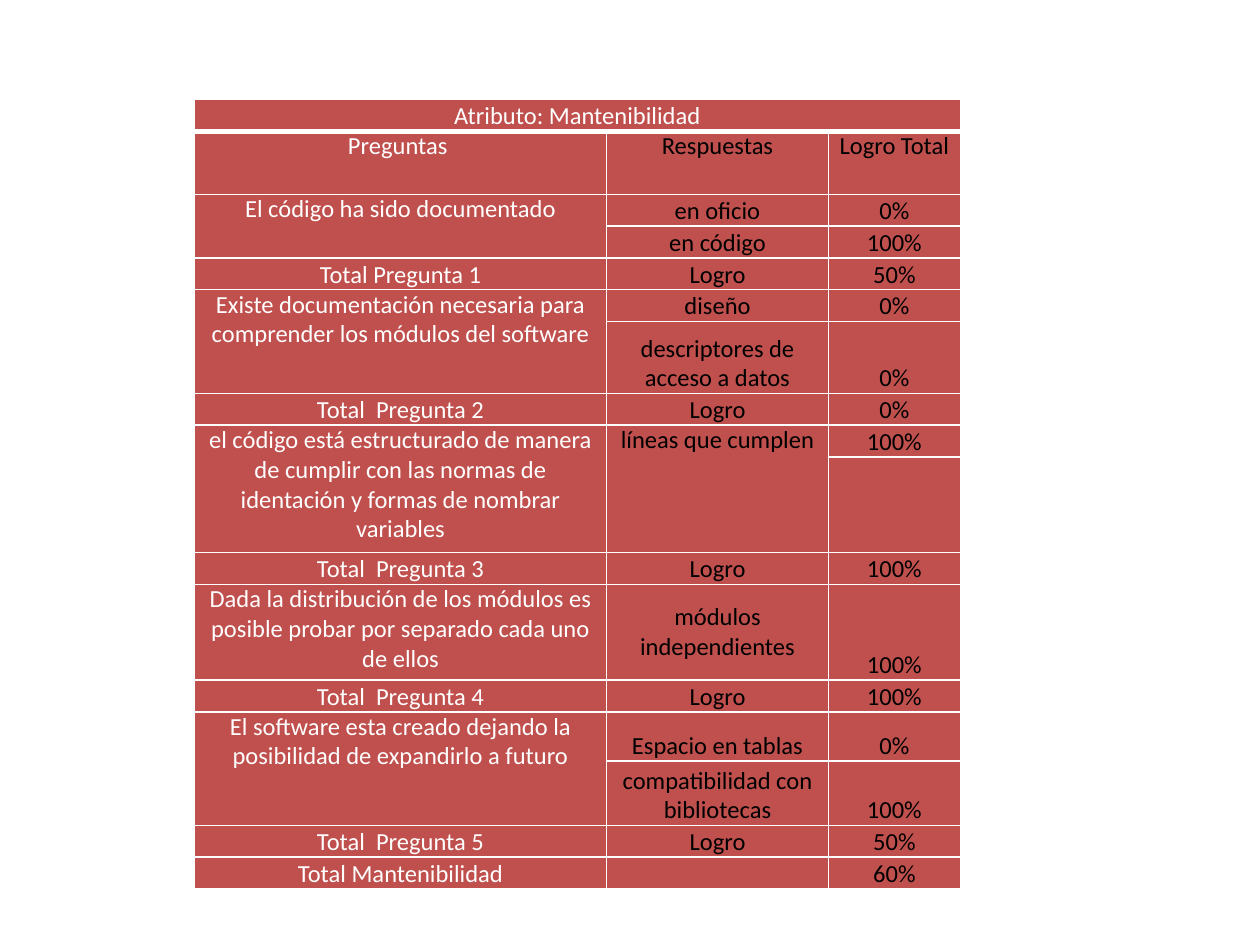
import dataclasses

import lxml.etree
import pptx
import pptx.dml.color
import pptx.enum.text
import pptx.oxml.ns
import pptx.util

Cm = pptx.util.Cm
Pt = pptx.util.Pt
Anchor = pptx.enum.text.MSO_ANCHOR


@dataclasses.dataclass(frozen=True)
class Theme:
    font: str = "Calibri"
    size: int = 14
    fill: str = "C0504D"
    label: str = "FFFFFF"
    value: str = "000000"
    border: str = "FFFFFF"
    thin: int = 1
    thick: int = 3


LINE = 0.64
COLUMN_WIDTHS = [8.31, 4.47, 2.66]

# None continues the cell above, or the title to its left.
ROWS = [
    (LINE, "Atributo: Mantenibilidad", None, None),
    (1.27, "Preguntas ", "Respuestas", "Logro Total"),
    (LINE, "El código ha sido documentado", "en oficio", "0%"),
    (LINE, None, "en código", "100%"),
    (LINE, "Total Pregunta 1", "Logro", "50%"),
    (LINE, "Existe documentación necesaria para comprender los módulos del software", "diseño", "0%"),
    (1.45, None, "descriptores de acceso a datos", "0%"),
    (LINE, "Total  Pregunta 2", "Logro", "0%"),
    (LINE, "el código está estructurado de manera de cumplir con las normas de "
           "identación y formas de nombrar variables", "líneas que cumplen", "100%"),
    (1.93, None, None, ""),
    (LINE, "Total  Pregunta 3", "Logro", "100%"),
    (1.93, "Dada la distribución de los módulos es posible probar por separado cada uno de ellos",
     "módulos independientes", "100%"),
    (LINE, "Total  Pregunta 4", "Logro", "100%"),
    (0.99, "El software esta creado dejando la posibilidad de expandirlo a futuro",
     "Espacio en tablas", "0%"),
    (1.3, None, "compatibilidad con bibliotecas", "100%"),
    (LINE, "Total  Pregunta 5", "Logro", "50%"),
    (LINE, "Total Mantenibilidad", "", "60%"),
]


def anchor_for(row, column, text):
    if text == "módulos independientes":
        return Anchor.MIDDLE
    is_question = column == 0 and row > 0 and not text.startswith("Total")
    if row == 1 or is_question or text == "líneas que cumplen":
        return Anchor.TOP
    return Anchor.BOTTOM


class SlideBuilder:
    def __init__(self, slide, theme):
        self.slide = slide
        self.theme = theme

    def borders(self, cell, bottom):
        properties = cell._tc.get_or_add_tcPr()
        widths = {"lnL": self.theme.thin, "lnR": self.theme.thin, "lnT": self.theme.thin, "lnB": bottom}
        for position, (side, width) in enumerate(widths.items()):
            line = lxml.etree.Element(pptx.oxml.ns.qn(f"a:{side}"), w=str(Pt(width)))
            solid = lxml.etree.SubElement(line, pptx.oxml.ns.qn("a:solidFill"))
            lxml.etree.SubElement(solid, pptx.oxml.ns.qn("a:srgbClr"), val=self.theme.border)
            properties.insert(position, line)

    def cell(self, cell, text, color, anchor, bottom):
        cell.fill.solid()
        cell.fill.fore_color.rgb = pptx.dml.color.RGBColor.from_string(self.theme.fill)
        cell.margin_left = cell.margin_right = Cm(0.13)
        cell.margin_top = cell.margin_bottom = 0
        cell.vertical_anchor = anchor
        self.borders(cell, bottom)
        paragraph = cell.text_frame.paragraphs[0]
        paragraph.alignment = pptx.enum.text.PP_ALIGN.CENTER
        if not text:
            paragraph._p.get_or_add_endParaRPr().set("sz", str(self.theme.size * 100))
            return
        paragraph.text = text
        for run in paragraph.runs:
            run.font.name = self.theme.font
            run.font.size = Pt(self.theme.size)
            run.font.bold = False
            run.font.color.rgb = pptx.dml.color.RGBColor.from_string(color)

    def table(self, left, top, column_widths, rows):
        height = sum(row[0] for row in rows)
        frame = self.slide.shapes.add_table(
            len(rows), len(column_widths), Cm(left), Cm(top), Cm(sum(column_widths)), Cm(height))
        table = frame.table
        table.first_row = table.horz_banding = False
        for column, width in zip(table.columns, column_widths):
            column.width = Cm(width)
        for row, (row_height, *texts) in enumerate(rows):
            table.rows[row].height = Cm(row_height)
            for column, text in enumerate(texts):
                color = self.theme.label if column == 0 else self.theme.value
                bottom = self.theme.thick if row == 0 else self.theme.thin
                self.cell(table.cell(row, column), text, color,
                          anchor_for(row, column, text or ""), bottom)
                if text is None and row > 0:
                    table.cell(row - 1, column).merge(table.cell(row, column))
        table.cell(0, 0).merge(table.cell(0, len(column_widths) - 1))


def main():
    presentation = pptx.Presentation()
    presentation.slide_width = Cm(25.4)
    presentation.slide_height = Cm(19.05)
    slide = presentation.slides.add_slide(presentation.slide_layouts[6])
    builder = SlideBuilder(slide, Theme())
    builder.table(3.92, 2.01, COLUMN_WIDTHS, ROWS)
    presentation.save("out.pptx")


if __name__ == "__main__":
    main()
